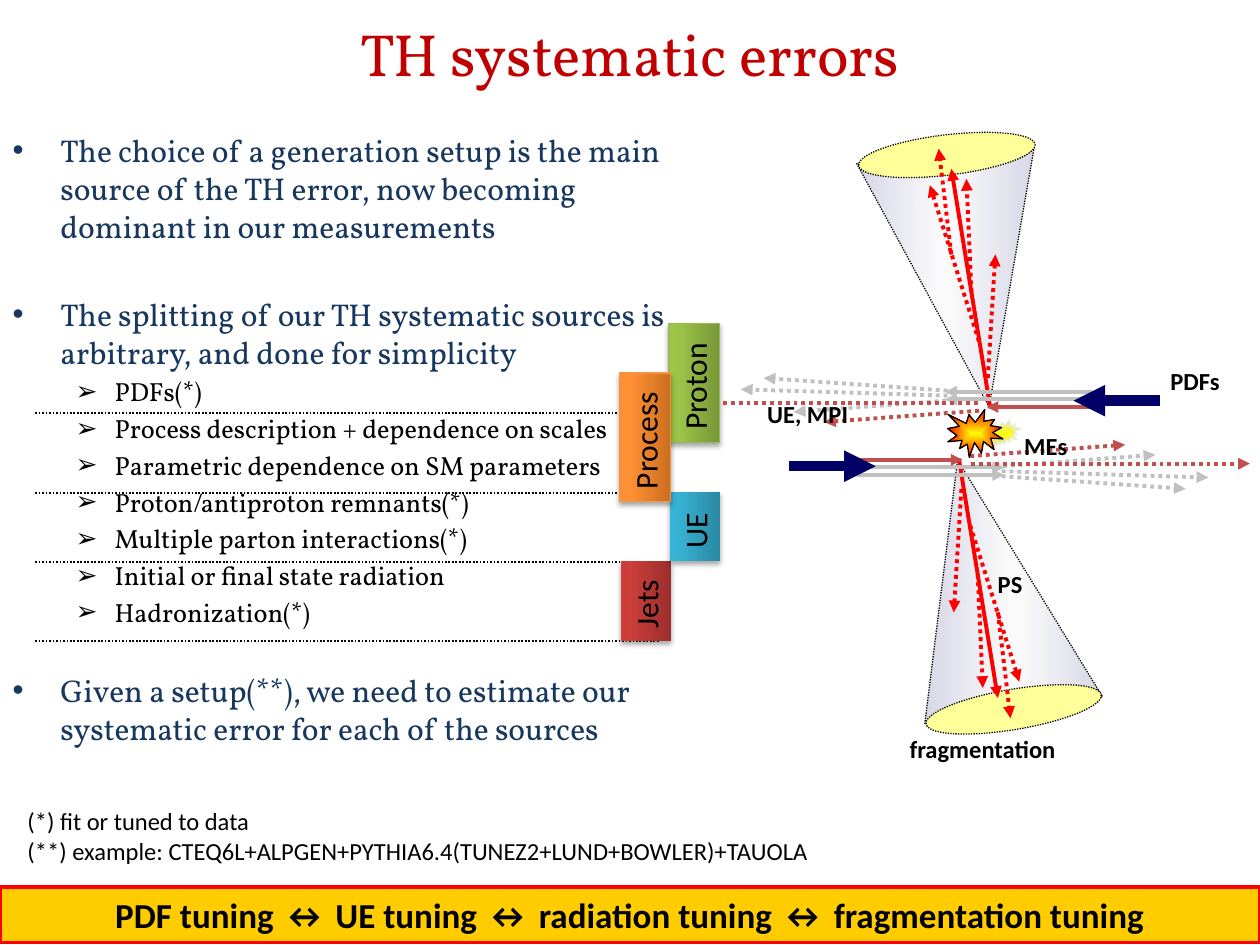
from dataclasses import dataclass

from lxml import etree
from pptx import Presentation
from pptx.dml.color import RGBColor
from pptx.enum.dml import MSO_LINE
from pptx.enum.shapes import MSO_CONNECTOR, MSO_SHAPE
from pptx.enum.text import MSO_ANCHOR, MSO_AUTO_SIZE, PP_ALIGN
from pptx.oxml.ns import qn
from pptx.util import Emu, Pt

PX = 9144  # EMU per px, 100 px to the inch
DOTTED = MSO_LINE.ROUND_DOT
STRAIGHT = MSO_CONNECTOR.STRAIGHT
RECT, ELLIPSE = MSO_SHAPE.RECTANGLE, MSO_SHAPE.OVAL
SMALL_BURST, BIG_BURST = MSO_SHAPE.EXPLOSION1, MSO_SHAPE.EXPLOSION2
LEFT, CENTER = PP_ALIGN.LEFT, PP_ALIGN.CENTER
TOP, MIDDLE = MSO_ANCHOR.TOP, MSO_ANCHOR.MIDDLE
NO_FIT, GROW = MSO_AUTO_SIZE.NONE, MSO_AUTO_SIZE.SHAPE_TO_FIT_TEXT


@dataclass(frozen=True)
class Theme:
    serif: str = "Vollkorn"
    sans: str = "Calibri"
    title: str = "C00000"
    point: str = "17375E"
    ink: str = "000000"
    red: str = "FF0000"
    brown: str = "C0504D"
    silver: str = "C0C0C0"
    navy: str = "000066"
    cone_middle: str = "EAEAEA"
    cone_end: str = "FFFF99"
    yellow: str = "FFFF00"
    haze: str = "DDDDDD"
    haze_edge: str = "EEECE1"
    banner: str = "FFCC00"
    title_size: int = 34
    banner_size: int = 20
    point_size: int = 18
    source_size: int = 15
    note_size: int = 14


@dataclass(frozen=True)
class Stroke:
    color: str
    width: float
    dotted: bool = False


@dataclass(frozen=True)
class Beam:
    stroke: Stroke
    points: tuple  # x1, y1, x2, y2


@dataclass(frozen=True)
class Tab:
    name: str
    box: tuple
    stops: tuple
    edge: str = ""


@dataclass(frozen=True)
class Item:
    text: str
    before: float
    source: bool = False


THEME = Theme()
OUTLINE = Stroke(THEME.ink, 0.75, True)
RULE = Stroke(THEME.ink, 1, True)
JET, HADRON = Stroke(THEME.red, 2.25), Stroke(THEME.red, 2.25, True)
QUARK, SPRAY = Stroke(THEME.silver, 2.25), Stroke(THEME.silver, 2.25, True)
PARTON, REMNANT = Stroke(THEME.brown, 2.25), Stroke(THEME.brown, 2.25, True)
PROTON = Stroke(THEME.navy, 6)

ITEMS = [
    Item("The choice of a generation setup is the main source of the TH error, "
         "now becoming dominant in our measurements", 0),
    Item("The splitting of our TH systematic sources is arbitrary, "
         "and done for simplicity", 28.8),
    *(Item(text, 3, True) for text in (
        "PDFs(*)", "Process description + dependence on scales",
        "Parametric dependence on SM parameters", "Proton/antiproton remnants(*)",
        "Multiple parton interactions(*)", "Initial or final state radiation",
        "Hadronization(*)")),
    Item("Given a setup(**), we need to estimate our systematic error "
         "for each of the sources", 24.6),
]

# Beams of the lower half; the upper half is the same turned by 180 degrees
BEAMS = [Beam(stroke, points) for stroke, points in (
    (JET, (761, 364, 792, 554)), (QUARK, (679, 371, 797, 371)),
    (QUARK, (680, 377, 797, 377)), (PARTON, (679, 365, 764, 365)),
    (PROTON, (626, 370, 695, 370)), (SPRAY, (796, 370, 917, 361)),
    (SPRAY, (795, 374, 959, 379)), (SPRAY, (795, 378, 941, 388)),
    (REMNANT, (770, 362, 893, 353)), (REMNANT, (771, 368, 992, 368)),
    (HADRON, (763, 388, 757, 486)), (HADRON, (776, 456, 780, 546)),
    (HADRON, (770, 417, 809, 541)), (HADRON, (792, 486, 802, 570)))]
MIRROR = (1547, 688, 1547, 688)

TABS = [
    Tab("Jets", (481, 457, 63, 40), ("9C2F2D", "CB3E3A", "CE3B37")),
    Tab("UE", (524, 398, 55, 40), ("2A88A2", "37B1D2", "34B4D6")),
    Tab("Proton", (504, 284, 94, 40), ("779737", "9BC348", "9DC746"), "98B955"),
    Tab("Process", (461, 327, 102, 40), ("CC6E20", "FF9034", "FF9136"), "F69240"),
]
LABELS = {"PDFs": (919, 286, 69, 33), "MEs": (803, 337, 60, 33),
          "UE, MPI": (599, 312, 98, 33), "fragmentation": (712, 578, 161, 33),
          "PS": (782, 447, 45, 33)}


def emu(values) -> list:
    return [Emu(value * PX) for value in values]


def add_xml(parent, tag: str, **attributes):
    return etree.SubElement(parent, qn(tag), {k: str(v) for k, v in attributes.items()})


def set_stroke(line, stroke: Stroke) -> None:
    line.color.rgb = RGBColor.from_string(stroke.color)
    line.width = Pt(stroke.width)
    if stroke.dotted:
        line.dash_style = DOTTED


def set_gradient(shape, stops, angle=None) -> None:
    """Stops are (percent, color, opacity); no angle means outward from the middle."""
    shape.fill.background()
    properties = shape._element.spPr
    gradient = etree.Element(qn("a:gradFill"), rotWithShape="1")
    stop_list = add_xml(gradient, "a:gsLst")
    for percent, color, opacity in stops:
        stop = add_xml(stop_list, "a:gs", pos=percent * 1000)
        add_xml(add_xml(stop, "a:srgbClr", val=color), "a:alpha", val=opacity * 1000)
    if angle is None:
        path = add_xml(gradient, "a:path", path="shape")
        add_xml(path, "a:fillToRect", l=50000, t=50000, r=50000, b=50000)
    else:
        add_xml(gradient, "a:lin", ang=angle * 60000, scaled=0)
    properties.replace(properties.find(qn("a:noFill")), gradient)


def write(para, text: str, size: float, color=THEME.ink, font=THEME.sans,
          bold=False, align=LEFT) -> None:
    para.alignment = align
    span = para.add_run()
    span.text = text
    span.font.name, span.font.size, span.font.bold = font, Pt(size), bold
    span.font.color.rgb = RGBColor.from_string(color)


def add_shape(page, kind, box: tuple, stroke=None, fill="", rotation=0.0):
    shape = page.shapes.add_shape(kind, *emu(box))
    shape.shadow.inherit = False
    shape.rotation = rotation
    if fill:
        shape.fill.solid()
        shape.fill.fore_color.rgb = RGBColor.from_string(fill)
    if stroke:
        set_stroke(shape.line, stroke)
    else:
        shape.line.fill.background()
    return shape


def add_line(page, points, stroke: Stroke, arrow=False) -> None:
    line = page.shapes.add_connector(STRAIGHT, *emu(points))
    set_stroke(line.line, stroke)
    if arrow:
        add_xml(line.line._get_or_add_ln(), "a:tailEnd", type="triangle")
    add_xml(line._element.spPr, "a:effectLst")


def add_cone(page, corners, end_box: tuple, rotation: float) -> None:
    builder = page.shapes.build_freeform(*corners[0], scale=PX)
    builder.add_line_segments(corners[1:], close=True)
    cone = builder.convert_to_shape()
    cone.shadow.inherit = False
    set_stroke(cone.line, OUTLINE)
    set_gradient(cone, ((0, THEME.navy, 16), (50, THEME.cone_middle, 14),
                        (100, THEME.navy, 16)), 0)
    add_shape(page, ELLIPSE, end_box, OUTLINE, THEME.cone_end, rotation)


def add_burst(page, kind, box: tuple, inner: str, outer: str, edge: str) -> None:
    burst = add_shape(page, kind, box, Stroke(edge, 0.75))
    set_gradient(burst, ((0, inner, 100), (100, outer, 100)))


def add_tab(page, tab: Tab) -> None:
    shape = add_shape(page, RECT, tab.box, Stroke(tab.edge, 0.75) if tab.edge else None,
                      rotation=270)
    set_gradient(shape, [(p, c, 100) for p, c in zip((0, 80, 100), tab.stops)], 270)
    effects = shape._element.spPr.find(qn("a:effectLst"))
    shadow = add_xml(effects, "a:outerShdw", blurRad=Pt(3.1), dist=Pt(1.8),
                     dir=90 * 60000, rotWithShape=0)
    add_xml(add_xml(shadow, "a:srgbClr", val=THEME.ink), "a:alpha", val=35000)
    write(shape.text_frame.paragraphs[0], tab.name, THEME.point_size)


def add_text(page, box: tuple, lines, bold=False, wrap=True) -> None:
    frame = page.shapes.add_textbox(*emu(box)).text_frame
    frame.word_wrap, frame.auto_size = wrap, GROW
    for index, text in enumerate(lines):
        para = frame.add_paragraph() if index else frame.paragraphs[0]
        write(para, text, THEME.note_size, bold=bold)


def place(holder, box: tuple, anchor):
    holder.left, holder.top, holder.width, holder.height = emu(box)
    frame = holder.text_frame
    frame.word_wrap, frame.auto_size, frame.vertical_anchor = True, NO_FIT, anchor
    return frame


def add_item(para, item: Item) -> None:
    margin, indent, mark = (81, -31, "➢") if item.source else (38, -38, "•")
    para.level = int(item.source)
    properties = para._p.get_or_add_pPr()
    properties.set("marL", str(margin * PX))
    properties.set("indent", str(indent * PX))
    add_xml(properties, "a:buFont", typeface="Arial")
    add_xml(properties, "a:buChar", char=mark)
    para.space_before = Pt(item.before)
    size, color = ((THEME.source_size, THEME.ink) if item.source
                   else (THEME.point_size, THEME.point))
    write(para, item.text, size, color, THEME.serif)


def main() -> None:
    deck = Presentation()
    deck.slide_width, deck.slide_height = emu((1000, 750))
    page = deck.slides.add_slide(deck.slide_layouts[1])

    # Title and list
    title = place(page.shapes.title, (0, 0, 1000, 84), MIDDLE)
    write(title.paragraphs[0], "TH systematic errors", THEME.title_size,
          THEME.title, THEME.serif, align=CENTER)
    body = place(page.placeholders[1], (0, 99, 571, 239), TOP)
    for index, item in enumerate(ITEMS):
        add_item(body.add_paragraph() if index else body.paragraphs[0], item)

    # Collision diagram
    add_burst(page, BIG_BURST, (782, 333, 29, 22), THEME.yellow, THEME.haze, THEME.haze_edge)
    add_cone(page, ((785, 323), (680, 130), (821, 116)), (681, 107, 141, 32), 353.2)
    add_cone(page, ((760, 365), (875, 553), (734, 574)), (734, 547, 141, 32), 170.5)
    for beam in BEAMS:
        add_line(page, beam.points, beam.stroke, arrow=True)
    for beam in BEAMS:
        turned = [total - value for total, value in zip(MIRROR, beam.points)]
        add_line(page, turned, beam.stroke, arrow=True)
    add_burst(page, SMALL_BURST, (752, 325, 44, 38), THEME.yellow, THEME.red, THEME.ink)
    for name, box in LABELS.items():
        add_text(page, box, [name], bold=True, wrap=False)

    # Banner
    banner = add_shape(page, RECT, (0, 704, 1000, 44), Stroke(THEME.red, 2), THEME.banner)
    write(banner.text_frame.paragraphs[0],
          "PDF tuning ↔ UE tuning ↔ radiation tuning ↔ fragmentation tuning",
          THEME.banner_size, bold=True, align=CENTER)

    # Group rules and tabs
    for y in (509, 391, 446, 328):
        add_line(page, (28, y, 523, y), RULE)
    for tab in TABS:
        add_tab(page, tab)

    # Footnotes
    add_text(page, (12, 635, 717, 57), [
        "(*) fit or tuned to data",
        "(**) example: CTEQ6L+ALPGEN+PYTHIA6.4(TUNEZ2+LUND+BOWLER)+TAUOLA"])
    deck.save("out.pptx")


if __name__ == "__main__":
    main()
